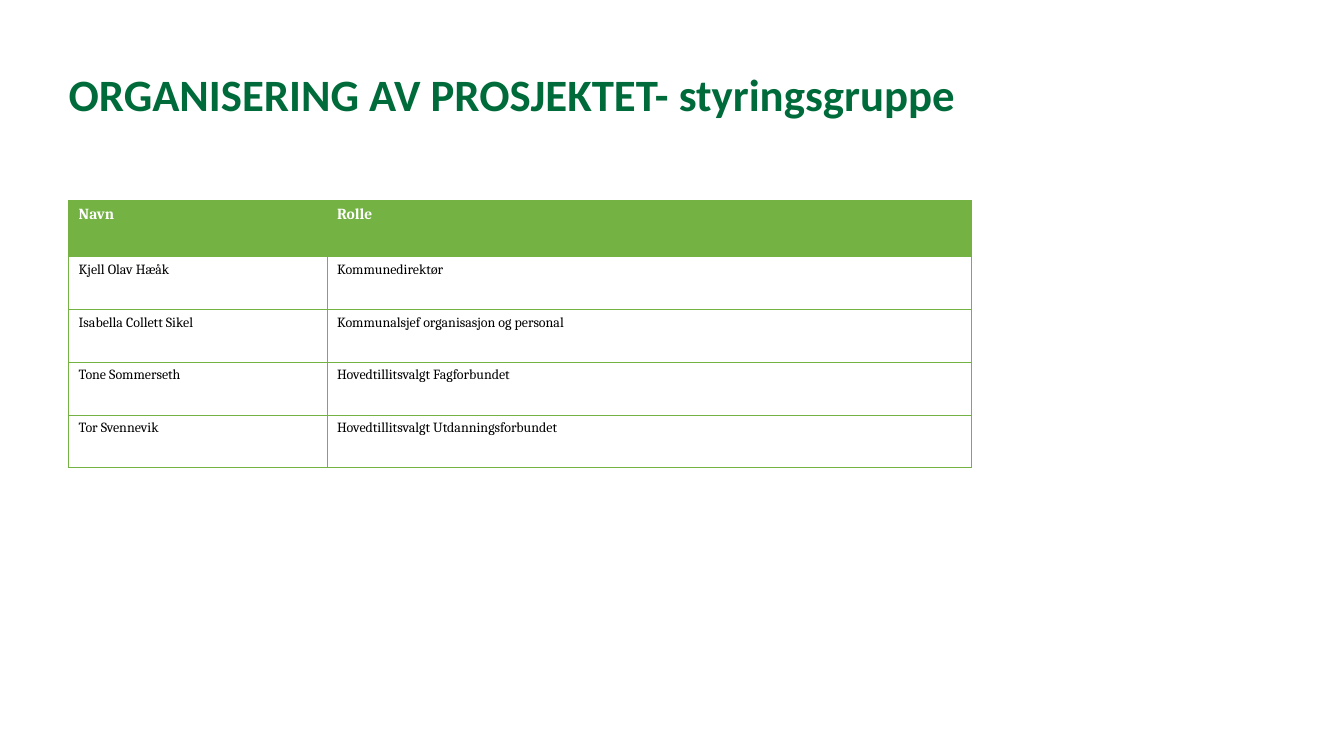
from lxml import etree
from pptx import Presentation
from pptx import util as u
from pptx.dml.color import RGBColor
from pptx.enum import text
from pptx.oxml.ns import qn

TITLE = "ORGANISERING AV PROSJEKTET- styringsgruppe"
MEMBERS = [
    ("Navn", "Rolle"),
    ("Kjell Olav Hæåk", "Kommunedirektør"),
    ("Isabella Collett Sikel", "Kommunalsjef organisasjon og personal"),
    ("Tone Sommerseth", "Hovedtillitsvalgt Fagforbundet"),
    ("Tor Svennevik", "Hovedtillitsvalgt Utdanningsforbundet"),
]

COLOURS = {"title": "006B3A", "table": "73B243", "header": "FFFFFF", "body": "000000"}
FORMATS = {
    "title": {"name": "Calibri", "size": u.Pt(32), "bold": True},
    "header": {"name": "Cambria", "size": u.Pt(11), "bold": True},
    "body": {"name": "Cambria", "size": u.Pt(10), "bold": False},
}
LEFT = u.Cm(1.73)
TABLE_TOP = u.Cm(5.05)
COLUMN_WIDTHS = [u.Cm(6.51), u.Cm(16.24)]
HEADER_HEIGHT, BODY_HEIGHT = u.Cm(1.42), u.Cm(1.33)
BORDER_WIDTH = u.Pt(0.75)


def write(frame, words, kind):
    paragraph = frame.paragraphs[0]
    run = paragraph.add_run()
    run.text = words
    for attribute, value in FORMATS[kind].items():
        setattr(run.font, attribute, value)
    run.font.color.rgb = RGBColor.from_string(COLOURS[kind])
    return paragraph


def add_borders(cell):
    properties = cell._tc.get_or_add_tcPr()
    for side in ("lnL", "lnR", "lnT", "lnB"):
        line = etree.SubElement(properties, qn(f"a:{side}"), w=str(BORDER_WIDTH))
        fill = etree.SubElement(line, qn("a:solidFill"))
        etree.SubElement(fill, qn("a:srgbClr"), val=COLOURS["table"])


def add_title(slide):
    box = slide.shapes.add_textbox(LEFT, u.Cm(1.83), u.Cm(30.4), u.Cm(1.8))
    frame = box.text_frame
    layout = {"word_wrap": True, "vertical_anchor": text.MSO_ANCHOR.TOP,
              "margin_left": 0, "margin_right": 0, "margin_top": 0, "margin_bottom": 0}
    for attribute, value in layout.items():
        setattr(frame, attribute, value)
    write(frame, TITLE, "title").line_spacing = 0.9


def add_members(slide):
    heights = [HEADER_HEIGHT] + [BODY_HEIGHT] * (len(MEMBERS) - 1)
    table = slide.shapes.add_table(len(MEMBERS), len(COLUMN_WIDTHS), LEFT, TABLE_TOP,
                                   sum(COLUMN_WIDTHS), sum(heights)).table
    table.first_row = table.horz_banding = False
    for column, width in zip(table.columns, COLUMN_WIDTHS):
        column.width = width
    for index, (row, height, member) in enumerate(zip(table.rows, heights, MEMBERS)):
        row.height = height
        kind = "body" if index else "header"
        for cell, words in zip(row.cells, member):
            add_borders(cell)
            if kind == "header":
                cell.fill.solid()
                cell.fill.fore_color.rgb = RGBColor.from_string(COLOURS["table"])
            else:
                cell.fill.background()
            write(cell.text_frame, words, kind)


def main():
    presentation = Presentation()
    presentation.slide_width, presentation.slide_height = u.Cm(33.87), u.Cm(19.05)
    slide = presentation.slides.add_slide(presentation.slide_layouts[6])
    add_title(slide)
    add_members(slide)
    presentation.save("out.pptx")


if __name__ == "__main__":
    main()
